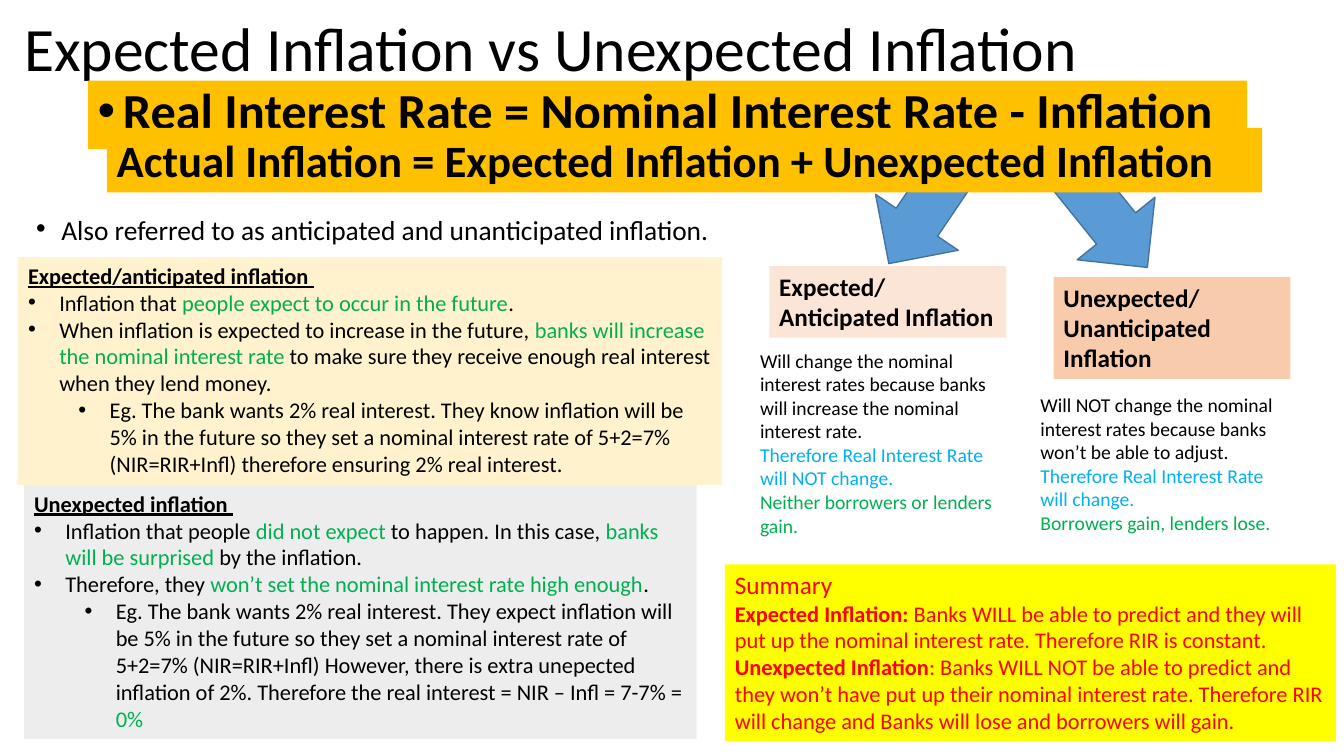
from dataclasses import dataclass
from lxml.etree import SubElement
from pptx import Presentation
from pptx.dml.color import RGBColor as Rgb
from pptx.enum.shapes import MSO_SHAPE as Shape
from pptx.enum.text import MSO_ANCHOR as Anchor, MSO_AUTO_SIZE as Fit
from pptx.oxml.ns import qn
from pptx.util import Inches, Pt


@dataclass(frozen=True)
class Theme:
    font: str = "Calibri"
    black: str = "000000"
    green: str = "00B050"
    sky: str = "00B0F0"
    red: str = "FF0000"
    gold: str = "FFC000"
    cream: str = "FFF2CC"
    grey: str = "EDEDED"
    yellow: str = "FFFF00"
    peach: str = "FBE5D6"
    salmon: str = "F8CBAD"
    blue: str = "5B9BD5"
    navy: str = "43739E"
    title: float = 44
    rate: float = 36
    sum: float = 32
    lead: float = 19.6
    label: float = 18
    body: float = 16
    note: float = 14


T = Theme()
WIDE, HIGH = Inches(13.33), Inches(7.5)

# Indents in inches by bullet level; level 0 has no bullet
INDENT = {1: (0.31, -0.31), 2: (0.81, -0.31), "lead": (0.25, -0.25)}

# A paragraph is (level, runs); a run is text, or (text, mark)
# Marks: g green, s sky, b bold, u underlined, L label size
EXPECTED = [
    (0, [("Expected/anticipated inflation ", "bu")]),
    (1, ["Inflation that ", ("people expect to occur in the future", "g"), "."]),
    (1, ["When inflation is expected to increase in the future, ",
         ("banks will increase the nominal interest rate", "g"),
         " to make sure they receive enough real interest when they lend money."]),
    (2, ["Eg. The bank wants 2% real interest. They know inflation will be 5% in the "
         "future so they set a nominal interest rate of 5+2=7% (NIR=RIR+Infl) "
         "therefore ensuring 2% real interest."]),
]
UNEXPECTED = [
    (0, [("Unexpected inflation ", "bu")]),
    (1, ["Inflation that people ", ("did not expect ", "g"), "to happen. In this case, ",
         ("banks will be surprised ", "g"), "by the inflation."]),
    (1, ["Therefore, they ",
         ("won’t set the nominal interest rate high enough", "g"), "."]),
    (2, ["Eg. The bank wants 2% real interest. They expect inflation will be 5% in the "
         "future so they set a nominal interest rate of 5+2=7% (NIR=RIR+Infl) However, "
         "there is extra unepected inflation of 2%. Therefore the real interest = "
         "NIR – Infl = 7-7% = ", ("0%", "g")]),
]
SUMMARY = [
    (0, [("Summary", "L")]),
    (0, [("Expected Inflation: ", "b"),
         "Banks WILL be able to predict and they will put up the nominal interest rate. "
         "Therefore RIR is constant."]),
    (0, [("Unexpected Inflation", "b"),
         ": Banks WILL NOT be able to predict and they won’t have put up their nominal "
         "interest rate. Therefore RIR will change and Banks will lose and borrowers "
         "will gain."]),
]
STEADY = [
    (0, ["Will change the nominal interest rates because banks will increase the "
         "nominal interest rate."]),
    (0, [("Therefore Real Interest Rate will NOT change.", "s")]),
    (0, [("Neither borrowers or lenders gain.", "g")]),
]
SHIFTED = [
    (0, ["Will NOT change the nominal interest rates because banks won’t be able to "
         "adjust."]),
    (0, [("Therefore Real Interest Rate will change.", "s")]),
    (0, [("Borrowers gain, lenders lose.", "g")]),
]
TITLE = [(0, ["Expected Inflation vs Unexpected Inflation"])]
LEAD = [("lead", ["Also referred to as anticipated and unanticipated inflation."])]
RATE = [("lead", [("Real Interest Rate = Nominal Interest Rate - Inflation", "b")])]
SUM = [(0, [("Actual Inflation = Expected Inflation + Unexpected Inflation", "b")])]
FORESEEN = [(0, [("Expected/", "b")]), (0, [("Anticipated Inflation", "b")])]
SURPRISE = [(0, [("Unexpected/", "b")]), (0, [("Unanticipated Inflation", "b")])]

# Places are left, top, width, height in percent of the slide.
# Panels: place, fill, size, paragraphs, other settings
BACK = [
    ((1.05, 0.53, 86.27, 12.53), None, T.title, TITLE,
     dict(lines=0.9, anchor=Anchor.MIDDLE, grow=False)),
    ((1.95, 28.67, 59.56, 4.4), None, T.lead, LEAD,
     dict(lines=0.7, before=10, grow=False)),
    ((1.35, 34, 52.36, 30.13), T.cream, T.body, EXPECTED, {}),
    ((53.94, 74.67, 45.46, 23.33), T.yellow, T.body, SUMMARY, dict(ink=T.red)),
    ((1.8, 64.13, 50.04, 33.6), T.grey, T.body, UNEXPECTED, {}),
    ((57.24, 35.2, 17.63, 9.47), T.peach, T.label, FORESEEN, {}),
    ((78.39, 36.67, 17.63, 13.47), T.salmon, T.label, SURPRISE, {}),
]
ARROWS = [
    ((65.49, 17.07, 7.43, 19.47), 34.1),
    ((78.32, 18.53, 7.43, 18.93), 321.2),
]
FRONT = [
    ((55.81, 45.47, 19.43, 26.53), None, T.note, STEADY, {}),
    ((76.67, 51.33, 19.43, 20.13), None, T.note, SHIFTED, {}),
    ((6.53, 10.67, 86.27, 9.07), T.gold, T.rate, RATE,
     dict(lines=0.9, before=10, grow=False)),
    ((7.95, 16.93, 85.97, 8.53), T.gold, T.sum, SUM, {}),
]


def scale(place):
    return [int(part * side / 100) for part, side in zip(place, (WIDE, HIGH) * 2)]


def bullet(para, level):
    props = para._p.get_or_add_pPr()
    left, hang = INDENT[level]
    props.set("marL", str(Inches(left)))
    props.set("indent", str(Inches(hang)))
    if level == 2:
        para.level = 1
    SubElement(props, qn("a:buFont"), typeface="Arial")
    SubElement(props, qn("a:buChar"), char="•")


def write(para, runs, size, ink):
    for item in runs:
        text, mark = (item, "") if isinstance(item, str) else item
        run = para.add_run()
        run.text = text
        font = run.font
        font.name = T.font
        font.size = Pt(T.label if "L" in mark else size)
        font.bold = "b" in mark
        font.underline = "u" in mark
        hue = T.green if "g" in mark else T.sky if "s" in mark else ink
        font.color.rgb = Rgb.from_string(hue)


def panel(slide, place, fill, size, paras, ink=T.black, lines=None, before=None,
          anchor=Anchor.TOP, grow=True):
    box = slide.shapes.add_textbox(*scale(place))
    if fill:
        box.fill.solid()
        box.fill.fore_color.rgb = Rgb.from_string(fill)
    frame = box.text_frame
    frame.word_wrap = True
    frame.vertical_anchor = anchor
    frame.auto_size = Fit.SHAPE_TO_FIT_TEXT if grow else Fit.NONE
    for i, (level, runs) in enumerate(paras):
        para = frame.add_paragraph() if i else frame.paragraphs[0]
        if lines:
            para.line_spacing = lines
        if before:
            para.space_before = Pt(before)
        if level:
            bullet(para, level)
        write(para, runs, size, ink)


def arrow(slide, place, turn):
    item = slide.shapes.add_shape(Shape.DOWN_ARROW, *scale(place))
    item.rotation = turn
    item.shadow.inherit = False
    item.fill.solid()
    item.fill.fore_color.rgb = Rgb.from_string(T.blue)
    item.line.color.rgb = Rgb.from_string(T.navy)
    item.line.width = Pt(1)


def main():
    deck = Presentation()
    deck.slide_width, deck.slide_height = WIDE, HIGH
    slide = deck.slides.add_slide(deck.slide_layouts[6])
    for *args, more in BACK:
        panel(slide, *args, **more)
    for place, turn in ARROWS:
        arrow(slide, place, turn)
    for *args, more in FRONT:
        panel(slide, *args, **more)
    deck.save("out.pptx")


if __name__ == "__main__":
    main()
